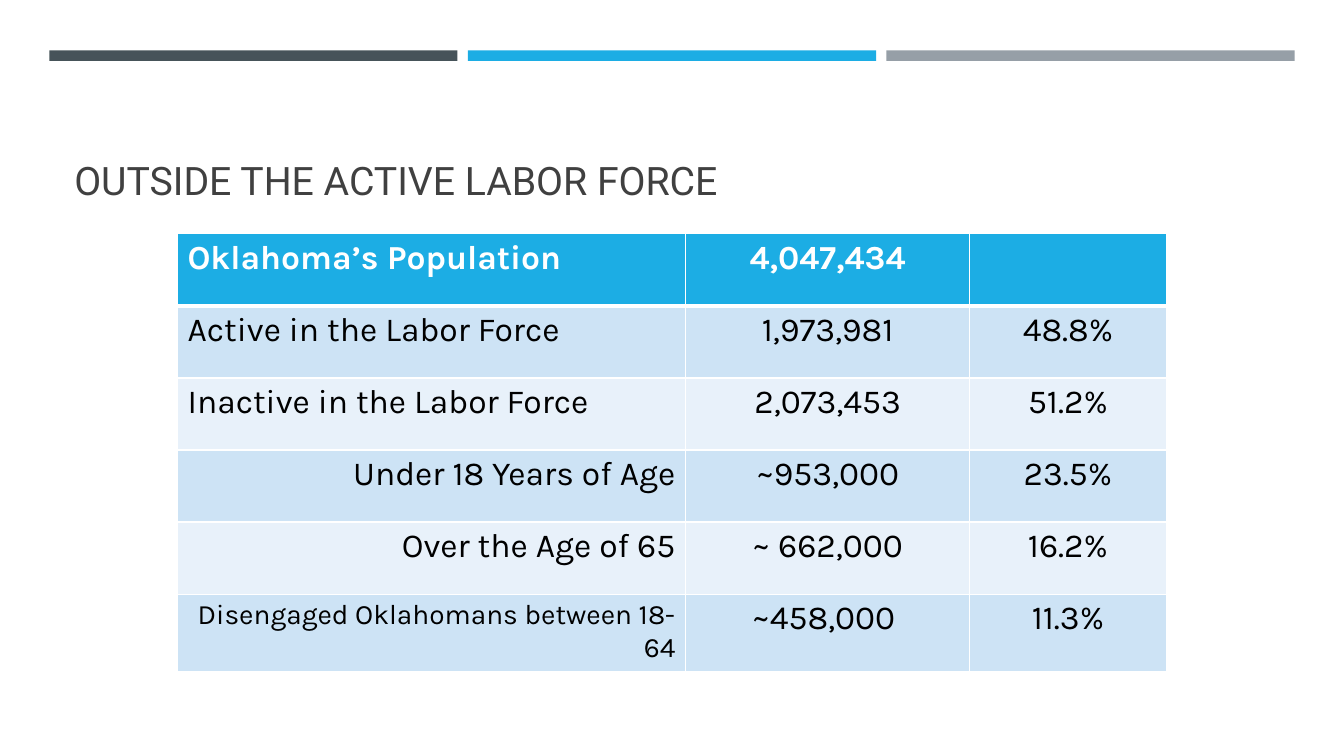
from dataclasses import dataclass

from lxml.etree import SubElement
from pptx import Presentation
from pptx.dml.color import RGBColor
from pptx.enum.shapes import MSO_SHAPE
from pptx.enum.text import MSO_ANCHOR, PP_ALIGN
from pptx.oxml.ns import qn
from pptx.util import Pt


@dataclass(frozen=True)
class Theme:
    dark: str = "465359"
    accent: str = "1CADE4"
    gray: str = "969FA7"
    title: str = "404040"
    black: str = "000000"
    white: str = "FFFFFF"
    bands: tuple = ("CDE3F5", "E8F1FA")
    heading_font: str = "Roboto"
    body_font: str = "Karla"
    heading_size: int = 28
    body_size: int = 24
    small_size: int = 20


THEME = Theme()
LEFT, CENTER, RIGHT = PP_ALIGN.LEFT, PP_ALIGN.CENTER, PP_ALIGN.RIGHT
COLUMN_WIDTHS = (362.9, 203, 140.4)
ROW_HEIGHT = 51.5
ROWS = (
    ("Oklahoma’s Population", "4,047,434", "", LEFT, THEME.body_size),
    ("Active in the Labor Force", "1,973,981", "48.8%", LEFT, THEME.body_size),
    ("Inactive in the Labor Force", "2,073,453", "51.2%", LEFT, THEME.body_size),
    ("Under 18 Years of Age", "~953,000", "23.5%", RIGHT, THEME.body_size),
    ("Over the Age of 65", "~ 662,000", "16.2%", RIGHT, THEME.body_size),
    ("Disengaged Oklahomans between 18-64", "~458,000 ", "11.3%", RIGHT, THEME.small_size),
)


def write_text(tf, text, *, font=THEME.body_font, size=THEME.body_size,
               color=THEME.black, bold=False, align=LEFT):
    """Write one formatted paragraph into a text frame."""
    p = tf.paragraphs[0]
    p.alignment = align
    r = p.add_run()
    r.text = text
    r.font.name = font
    r.font.size = Pt(size)
    r.font.bold = bold
    r.font.color.rgb = RGBColor.from_string(color)


def add_bar(s, left, color):
    """Add one of the bars along the top edge."""
    sp = s.shapes.add_shape(MSO_SHAPE.RECTANGLE, Pt(left), Pt(36), Pt(291.6), Pt(7.5))
    sp.shadow.inherit = False
    sp.fill.solid()
    sp.fill.fore_color.rgb = RGBColor.from_string(color)
    sp.line.fill.background()


def add_title(s, text):
    """Add the slide heading, anchored at the bottom of its box."""
    tf = s.shapes.add_textbox(Pt(46), Pt(55.5), Pt(868), Pt(93.5)).text_frame
    tf.word_wrap = True
    tf.vertical_anchor = MSO_ANCHOR.BOTTOM
    write_text(tf, text, font=THEME.heading_font, size=THEME.heading_size, color=THEME.title)


def set_borders(cell, **widths):
    """Draw white cell borders with the given widths per side."""
    tcPr = cell._tc.get_or_add_tcPr()
    for side, width in widths.items():
        ln = SubElement(tcPr, qn(f"a:ln{side}"), w=str(Pt(width)))
        fill = SubElement(ln, qn("a:solidFill"))
        SubElement(fill, qn("a:srgbClr"), val=THEME.white)


def fill_cell(cell, color):
    """Give a cell a solid fill."""
    cell.fill.solid()
    cell.fill.fore_color.rgb = RGBColor.from_string(color)


def add_population_table(s):
    """Add the population table with a header and banded rows."""
    table = s.shapes.add_table(len(ROWS), len(COLUMN_WIDTHS), Pt(126.8), Pt(167),
                               Pt(sum(COLUMN_WIDTHS)), Pt(ROW_HEIGHT * len(ROWS))).table
    for column, width in zip(table.columns, COLUMN_WIDTHS):
        column.width = Pt(width)
    for i, (label, count, share, align, size) in enumerate(ROWS):
        table.rows[i].height = Pt(ROW_HEIGHT)
        header = i == 0
        formats = ((label, align, size), (count, CENTER, THEME.body_size),
                   (share, CENTER, THEME.body_size))
        for cell, (text, cell_align, cell_size) in zip(table.rows[i].cells, formats):
            set_borders(cell, L=1, R=1, T=3 if i == 1 else 1, B=3 if header else 1)
            fill_cell(cell, THEME.accent if header else THEME.bands[(i - 1) % 2])
            if text:
                write_text(cell.text_frame, text, size=cell_size, align=cell_align,
                           bold=header, color=THEME.white if header else THEME.black)


def main():
    """Build the slide and save it."""
    prs = Presentation()
    prs.slide_width, prs.slide_height = Pt(960), Pt(540)
    s = prs.slides.add_slide(prs.slide_layouts[6])
    for i, color in enumerate((THEME.dark, THEME.accent, THEME.gray)):
        add_bar(s, 35.2 + 299 * i, color)
    add_title(s, "OUTSIDE THE ACTIVE LABOR FORCE")
    add_population_table(s)
    prs.save("out.pptx")


if __name__ == "__main__":
    main()
